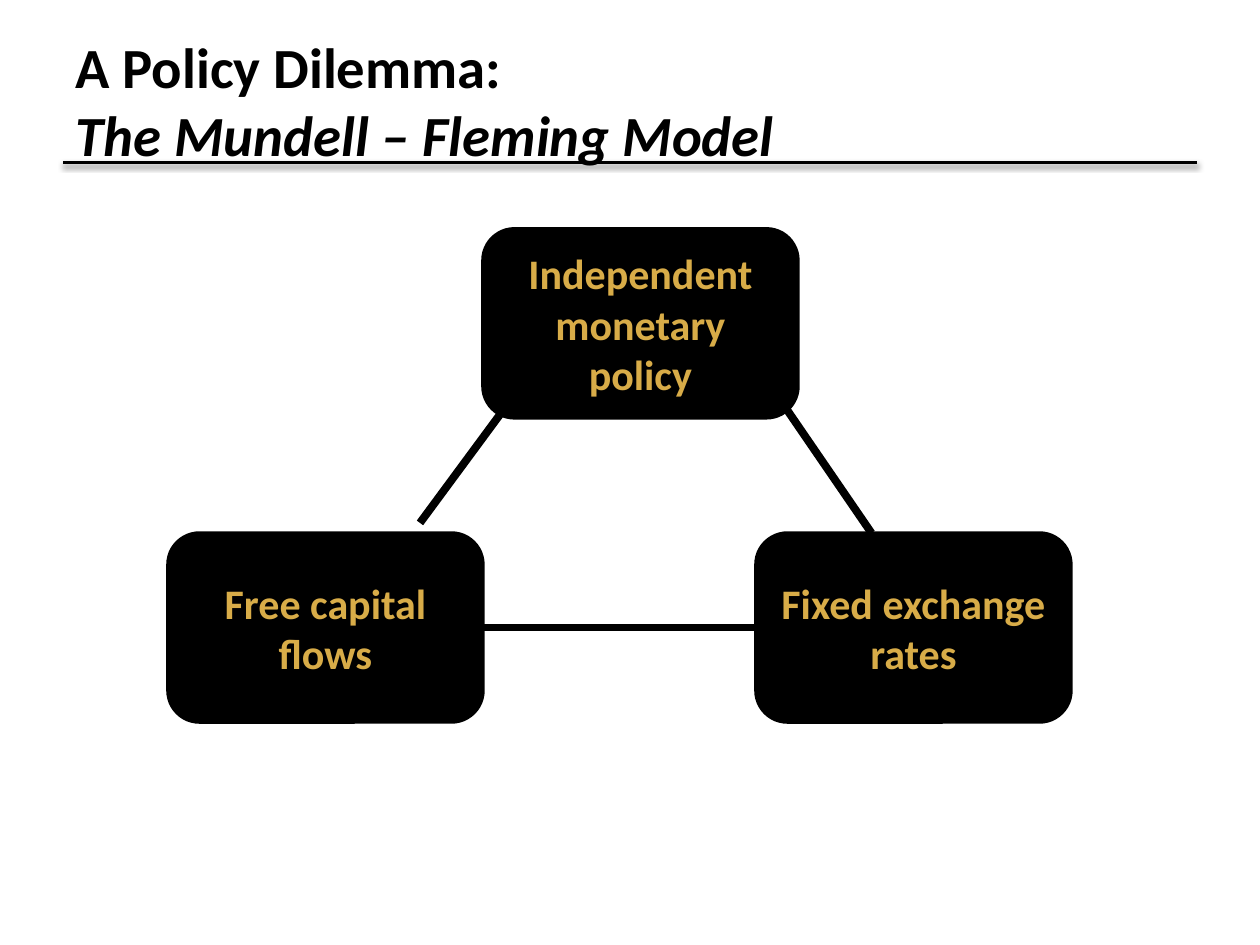
"""Build a slide showing the policy dilemma of the Mundell – Fleming model."""
from lxml.etree import SubElement
from pptx import Presentation
from pptx.dml.color import RGBColor
from pptx.enum.shapes import MSO_CONNECTOR, MSO_SHAPE
from pptx.enum.text import MSO_ANCHOR, PP_ALIGN
from pptx.oxml.ns import qn
from pptx.util import Pt

BLACK = "000000"
GOLD = "D8AC48"
BOX_WIDTH, BOX_HEIGHT = 180, 108


def color(value):
    return RGBColor.from_string(value)


def write(paragraph, text, size=24, fill=GOLD, italic=False, align=PP_ALIGN.CENTER):
    paragraph.alignment = align
    span = paragraph.add_run()
    span.text = text
    span.font.name = "Calibri"
    span.font.size = Pt(size)
    span.font.bold = True
    span.font.italic = italic
    span.font.color.rgb = color(fill)


deck = Presentation()
deck.slide_width, deck.slide_height = Pt(720), Pt(540)
page = deck.slides.add_slide(deck.slide_layouts[5])

title = page.shapes.title
title.left, title.top, title.width, title.height = Pt(36), Pt(21.6), Pt(648), Pt(71.3)
title.text_frame.word_wrap = True
title.text_frame.vertical_anchor = MSO_ANCHOR.MIDDLE
heading = title.text_frame.paragraphs[0]
write(heading, "A Policy Dilemma:", size=32.4, fill=BLACK, align=PP_ALIGN.LEFT)
heading.add_line_break()
write(heading, "The Mundell – Fleming Model", size=32.4, fill=BLACK, italic=True,
      align=PP_ALIGN.LEFT)

lines = []
for start_x, start_y, end_x, end_y, weight in [
    (36, 92.9, 684, 92.9, 2),
    (420, 190.8, 498, 304.6, 4.5),
    (324, 185, 240, 298.8, 4.5),
    (276, 358.6, 432, 358.6, 4.5),
]:
    line = page.shapes.add_connector(
        MSO_CONNECTOR.STRAIGHT, Pt(start_x), Pt(start_y), Pt(end_x), Pt(end_y))
    line.line.color.rgb = color(BLACK)
    line.line.width = Pt(weight)
    SubElement(line.element.spPr, qn("a:effectLst"))
    lines.append(line)

title_rule = lines[0]
title.element.addprevious(title_rule.element)
shadow = SubElement(title_rule.element.spPr.find(qn("a:effectLst")), qn("a:outerShdw"),
                    blurRad=str(Pt(3.1)), dist=str(Pt(1.6)), dir="5400000", rotWithShape="0")
shadow_color = SubElement(shadow, qn("a:srgbClr"), val=BLACK)
SubElement(shadow_color, qn("a:alpha"), val="38000")

for text, left, top in [
    ("Fixed exchange rates", 432, 304.6),
    ("Free capital flows", 96, 304.6),
    ("Independent monetary policy", 276, 130.8),
]:
    box = page.shapes.add_shape(
        MSO_SHAPE.ROUNDED_RECTANGLE, Pt(left), Pt(top), Pt(BOX_WIDTH), Pt(BOX_HEIGHT))
    box.shadow.inherit = False
    box.fill.solid()
    box.fill.fore_color.rgb = color(BLACK)
    box.line.color.rgb = color(BLACK)
    box.line.width = Pt(2)
    box.text_frame.word_wrap = True
    box.text_frame.vertical_anchor = MSO_ANCHOR.MIDDLE
    write(box.text_frame.paragraphs[0], text)

deck.save("out.pptx")
